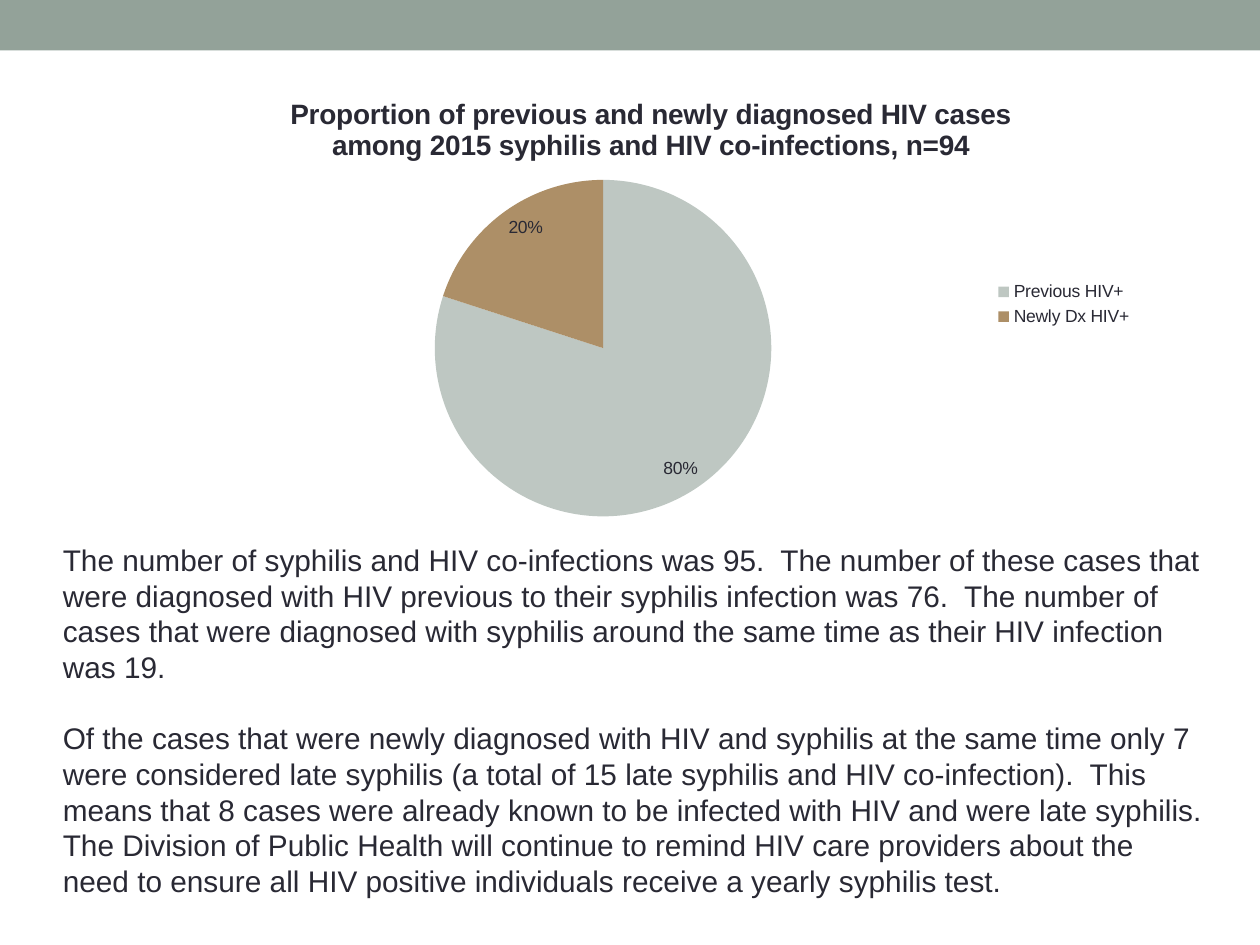
from lxml.etree import SubElement
from pptx import Presentation
from pptx.chart.data import CategoryChartData
from pptx.dml.color import RGBColor
from pptx.enum.chart import XL_CHART_TYPE, XL_LABEL_POSITION, XL_LEGEND_POSITION
from pptx.enum.shapes import MSO_SHAPE
from pptx.oxml.ns import qn
from pptx.util import Inches, Pt

WIDTH, HEIGHT = Inches(10), Inches(7.5)
SAGE = RGBColor(0x93, 0xA2, 0x99)
INK = RGBColor(0x29, 0x29, 0x34)
SLICES = {
    "Previous HIV+": (80, RGBColor(0xBE, 0xC7, 0xC2)),
    "Newly Dx HIV+": (20, RGBColor(0xAD, 0x8F, 0x67)),
}
TITLE = ("Proportion of previous and newly diagnosed HIV cases "
         "among 2015 syphilis and HIV co-infections, n=94")
PARAGRAPHS = [
    "The number of syphilis and HIV co-infections was 95.  The number of these "
    "cases that were diagnosed with HIV previous to their syphilis infection "
    "was 76.  The number of cases that were diagnosed with syphilis around the "
    "same time as their HIV infection was 19.",
    "Of the cases that were newly diagnosed with HIV and syphilis at the same "
    "time only 7 were considered late syphilis (a total of 15 late syphilis and "
    "HIV co-infection).  This means that 8 cases were already known to be "
    "infected with HIV and were late syphilis. The Division of Public Health "
    "will continue to remind HIV care providers about the need to ensure all "
    "HIV positive individuals receive a yearly syphilis test.",
]


def set_font(font, size, **values):
    """Apply the slide's typeface and colour with the given values."""
    for name, value in {"name": "Arial", "size": Pt(size), **values}.items():
        setattr(font, name, value)
    font.color.rgb = INK


def set_layout(element, **values):
    """Place a chart part by shares of the chart's size."""
    layout = element.get_or_add_layout() if hasattr(element, "get_or_add_layout") else element.find(qn("c:layout"))
    if layout is None:
        layout = element.makeelement(qn("c:layout"))
        element.insert(0, layout)
    for child in list(layout):
        layout.remove(child)
    manual = SubElement(layout, qn("c:manualLayout"))
    for tag, value in values.items():
        SubElement(manual, qn(f"c:{tag}")).set("val", str(value))


def add_band(s):
    """Draw the band along the top edge."""
    sp = s.shapes.add_shape(MSO_SHAPE.RECTANGLE, 0, 0, WIDTH, Inches(0.4))
    sp.shadow.inherit = False
    sp.fill.solid()
    sp.fill.fore_color.rgb = SAGE
    sp.line.fill.background()


def add_pie(s):
    """Add the pie chart with its title, labels and legend."""
    data = CategoryChartData()
    data.categories = list(SLICES)
    data.add_series("Series 1", [value for value, _ in SLICES.values()])
    box = [Inches(n) for n in (1.67, 0.58, 7.42, 3.67)]
    chart = s.shapes.add_chart(XL_CHART_TYPE.PIE, *box, data).chart
    set_font(chart.font, 10)

    chart.has_title = True
    tf = chart.chart_title.text_frame
    tf.text = TITLE
    set_font(tf.paragraphs[0].runs[0].font, 16, bold=True)
    title = chart.chart_title._element
    set_layout(title, xMode="edge", yMode="edge", x=0.08, y=0.04)

    chart.has_legend = True
    chart.legend.position = XL_LEGEND_POSITION.RIGHT
    chart.legend.include_in_layout = False
    set_font(chart.legend.font, 10)

    plot = chart.plots[0]
    plot.vary_by_categories = True
    for i, (_, color) in enumerate(SLICES.values()):
        fill = plot.series[0].points[i].format.fill
        fill.solid()
        fill.fore_color.rgb = color
    plot.has_data_labels = True
    labels = plot.data_labels
    formats = {"show_percentage": True, "show_value": False,
               "number_format": "0%", "number_format_is_linked": False,
               "position": XL_LABEL_POSITION.INSIDE_END}
    for name, value in formats.items():
        setattr(labels, name, value)
    set_font(labels.font, 10)
    set_layout(chart._chartSpace.chart.plotArea, layoutTarget="inner",
               xMode="edge", yMode="edge", x=0.24, y=0.23, w=0.36, h=0.73)


def add_body(s):
    """Add the explanatory paragraphs below the chart."""
    box = [Inches(n) for n in (0.4, 4.25, 9.25, 2.96)]
    tf = s.shapes.add_textbox(*box).text_frame
    tf.word_wrap = True
    for i, text in enumerate(PARAGRAPHS):
        p = tf.add_paragraph() if i else tf.paragraphs[0]
        p.line_spacing = Pt(20.4)
        p.space_before = Pt(20.4 if i else 0)
        r = p.add_run()
        r.text = text
        set_font(r.font, 17)


def main():
    """Build and save the slide."""
    prs = Presentation()
    prs.slide_width, prs.slide_height = WIDTH, HEIGHT
    s = prs.slides.add_slide(prs.slide_layouts[6])
    add_band(s)
    add_pie(s)
    add_body(s)
    prs.save("out.pptx")


if __name__ == "__main__":
    main()
